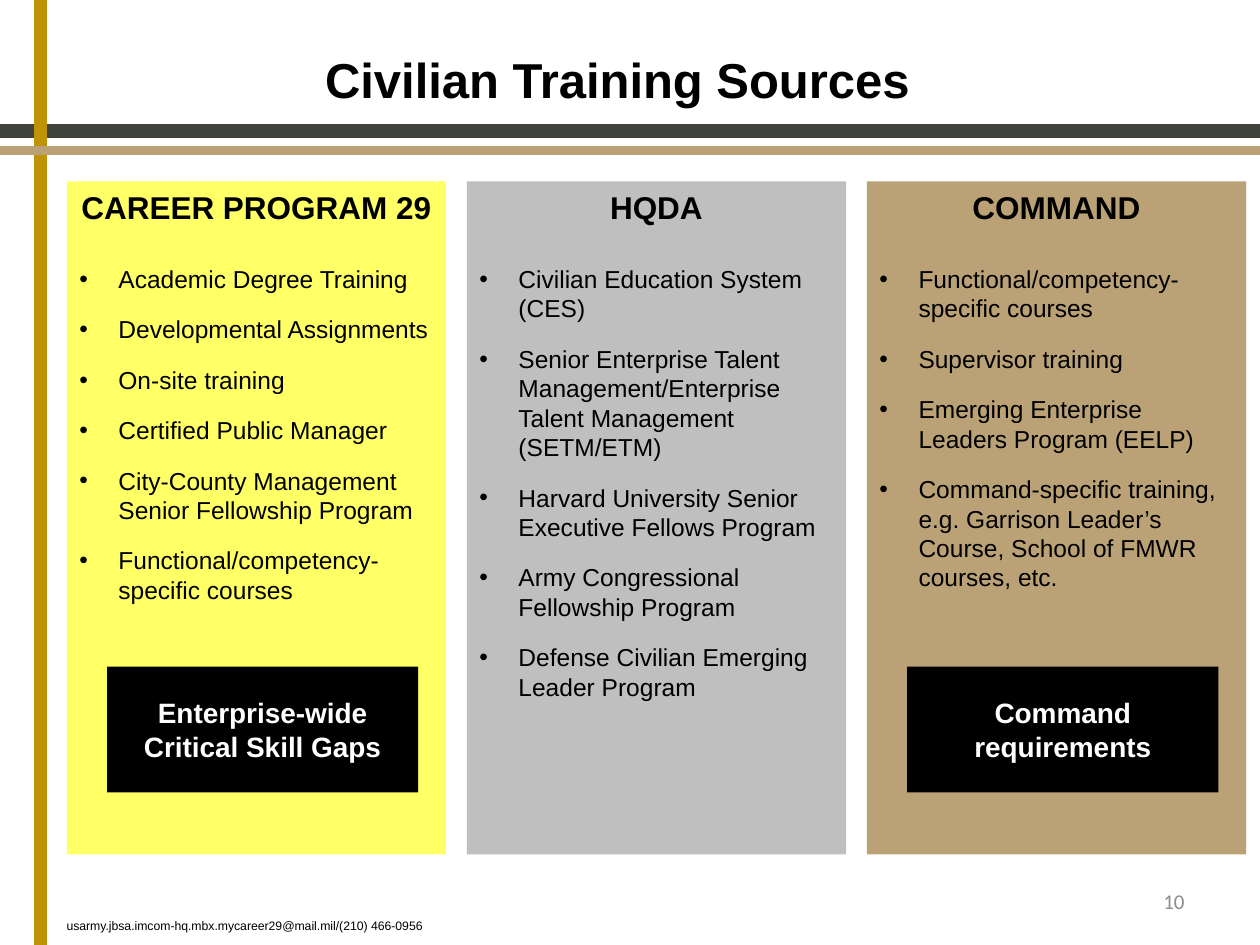
from dataclasses import dataclass
from typing import Optional

from lxml import etree
from pptx import Presentation
from pptx.dml.color import RGBColor
from pptx.enum import shapes, text
from pptx.oxml import ns
from pptx.util import Inches, Pt

COLORS = {
    "black": "000000", "white": "FFFFFF", "charcoal": "3F4339", "gold": "BF9305",
    "tan": "BBA276", "yellow": "FFFF66", "silver": "BFBFBF", "gray": "8C8C8C",
}
PANEL_LEFT, PANEL_PITCH, PANEL_TOP = 0.53, 3.175, 1.44
PANEL_WIDTH, PANEL_HEIGHT = 3.01, 5.34
NEED_OFFSET, NEED_TOP, NEED_WIDTH, NEED_HEIGHT = 0.32, 5.29, 2.47, 1
BULLET_INDENT = Inches(0.31)


@dataclass
class Bar:
    left: float
    top: float
    width: float
    height: float
    color: str


@dataclass
class Source:
    heading: str
    color: str
    programs: list[str]
    need: Optional[str] = None


BARS = [
    Bar(0, 1, 10, 0.08, "charcoal"),
    Bar(0.28, 0, 0.08, 7.5, "gold"),
    Bar(0, 1.17, 10, 0.05, "tan"),
]
SOURCES = [
    Source("CAREER PROGRAM 29", "yellow", [
        "Academic Degree Training",
        "Developmental Assignments",
        "On-site training",
        "Certified Public Manager",
        "City-County Management Senior Fellowship Program",
        "Functional/competency-specific courses",
    ], "Enterprise-wide\vCritical Skill Gaps"),
    Source("HQDA", "silver", [
        "Civilian Education System (CES)",
        "Senior Enterprise Talent Management/Enterprise Talent Management (SETM/ETM)",
        "Harvard University Senior Executive Fellows Program",
        "Army Congressional Fellowship Program",
        "Defense Civilian Emerging Leader Program",
    ]),
    Source("COMMAND", "tan", [
        "Functional/competency-specific courses",
        "Supervisor training",
        "Emerging Enterprise Leaders Program (EELP)",
        "Command-specific training, e.g. Garrison Leader’s Course, School of FMWR courses, etc.",
    ], "Command requirements"),
]


def rgb(color: str) -> RGBColor:
    return RGBColor.from_string(COLORS[color])


def apply(target, formats: dict) -> None:
    for name, value in formats.items():
        setattr(target, name, value)


def place(shape, left: float, top: float, width: float, height: float) -> None:
    apply(shape, {"left": Inches(left), "top": Inches(top),
                  "width": Inches(width), "height": Inches(height)})


def format_font(font, size: float, color: str = "black", bold: bool = False,
                name: str = "Arial") -> None:
    apply(font, {"size": Pt(size), "bold": bold, "name": name})
    font.color.rgb = rgb(color)


def add_block(slide, left: float, top: float, width: float, height: float, color: str):
    block = slide.shapes.add_shape(shapes.MSO_SHAPE.RECTANGLE, Inches(left), Inches(top),
                                   Inches(width), Inches(height))
    block.shadow.inherit = False
    block.fill.solid()
    block.fill.fore_color.rgb = rgb(color)
    block.line.fill.background()
    return block


def add_bar(slide, bar: Bar) -> None:
    block = add_block(slide, bar.left, bar.top, bar.width, bar.height, bar.color)
    block.line.color.rgb = rgb(bar.color)
    block.line.width = Pt(2)


def set_bullet(paragraph, indent: int, bullet: Optional[str]) -> None:
    properties = paragraph._p.get_or_add_pPr()
    properties.set("marL", str(indent))
    properties.set("indent", str(-indent))
    if bullet:
        etree.SubElement(properties, ns.qn("a:buFont"), typeface="Arial")
        etree.SubElement(properties, ns.qn("a:buChar"), char=bullet)
    else:
        etree.SubElement(properties, ns.qn("a:buNone"))


def fill_panel(panel, source: Source, left: float) -> None:
    place(panel, left, PANEL_TOP, PANEL_WIDTH, PANEL_HEIGHT)
    panel.fill.solid()
    panel.fill.fore_color.rgb = rgb(source.color)
    frame = panel.text_frame
    apply(frame, {"word_wrap": True, "auto_size": text.MSO_AUTO_SIZE.NONE,
                  "vertical_anchor": text.MSO_ANCHOR.TOP})
    heading = frame.paragraphs[0]
    heading.text = source.heading
    apply(heading, {"alignment": text.PP_ALIGN.CENTER, "space_before": Pt(0),
                    "space_after": Pt(22)})
    set_bullet(heading, 0, None)
    format_font(heading.font, 18, bold=True)
    for program in source.programs:
        item = frame.add_paragraph()
        item.text = program
        apply(item, {"alignment": text.PP_ALIGN.LEFT, "space_before": Pt(0),
                     "space_after": Pt(12)})
        set_bullet(item, BULLET_INDENT, "•")
        format_font(item.font, 14)


def add_need(slide, need: str, panel_left: float) -> None:
    block = add_block(slide, panel_left + NEED_OFFSET, NEED_TOP, NEED_WIDTH, NEED_HEIGHT, "black")
    frame = block.text_frame
    apply(frame, {"word_wrap": True, "vertical_anchor": text.MSO_ANCHOR.MIDDLE,
                  "margin_left": 0, "margin_right": 0, "margin_top": 0, "margin_bottom": 0})
    label = frame.paragraphs[0]
    label.text = need
    label.alignment = text.PP_ALIGN.CENTER
    format_font(label.font, 16, "white", True)


def set_title(title, wording: str) -> None:
    place(title, 0.4, 0, 9, 1.25)
    title.text_frame.vertical_anchor = text.MSO_ANCHOR.MIDDLE
    paragraph = title.text_frame.paragraphs[0]
    paragraph.alignment = text.PP_ALIGN.CENTER
    run = paragraph.add_run()
    run.text = wording
    format_font(run.font, 28, bold=True)
    effects = etree.Element(ns.qn("a:effectLst"))
    shadow = etree.SubElement(effects, ns.qn("a:outerShdw"), blurRad="38100", dist="38100",
                              dir="2700000", algn="tl")
    shade = etree.SubElement(shadow, ns.qn("a:srgbClr"), val=COLORS["black"])
    etree.SubElement(shade, ns.qn("a:alpha"), val="43000")
    run._r.rPr.find(ns.qn("a:solidFill")).addnext(effects)


def add_note(slide, wording: str, left: float, top: float, width: float, height: float,
             alignment, anchor, **font_formats) -> None:
    box = slide.shapes.add_textbox(Inches(left), Inches(top), Inches(width), Inches(height))
    apply(box.text_frame, {"word_wrap": True, "vertical_anchor": anchor})
    paragraph = box.text_frame.paragraphs[0]
    paragraph.text = wording
    paragraph.alignment = alignment
    format_font(paragraph.font, **font_formats)


def main() -> None:
    deck = Presentation()
    apply(deck, {"slide_width": Inches(10), "slide_height": Inches(7.5)})
    slide = deck.slides.add_slide(deck.slide_layouts.get_by_name("Comparison"))
    set_title(slide.shapes.title, "Civilian Training Sources")
    *panels, spare = list(slide.placeholders)[1:]
    spare.element.getparent().remove(spare.element)
    for bar in BARS:
        add_bar(slide, bar)
    for column, (panel, source) in enumerate(zip(panels, SOURCES)):
        left = PANEL_LEFT + column * PANEL_PITCH
        fill_panel(panel, source, left)
        if source.need:
            add_need(slide, source.need, left)
    add_note(slide, "usarmy.jbsa.imcom-hq.mbx.mycareer29@mail.mil/(210) 466-0956",
             0.43, 7.24, 3.76, 0.22, text.PP_ALIGN.LEFT, text.MSO_ANCHOR.TOP, size=7)
    add_note(slide, "10", 7.17, 6.95, 2.33, 0.4, text.PP_ALIGN.RIGHT, text.MSO_ANCHOR.MIDDLE,
             size=12, color="gray", name="Calibri")
    deck.save("out.pptx")


if __name__ == "__main__":
    main()
